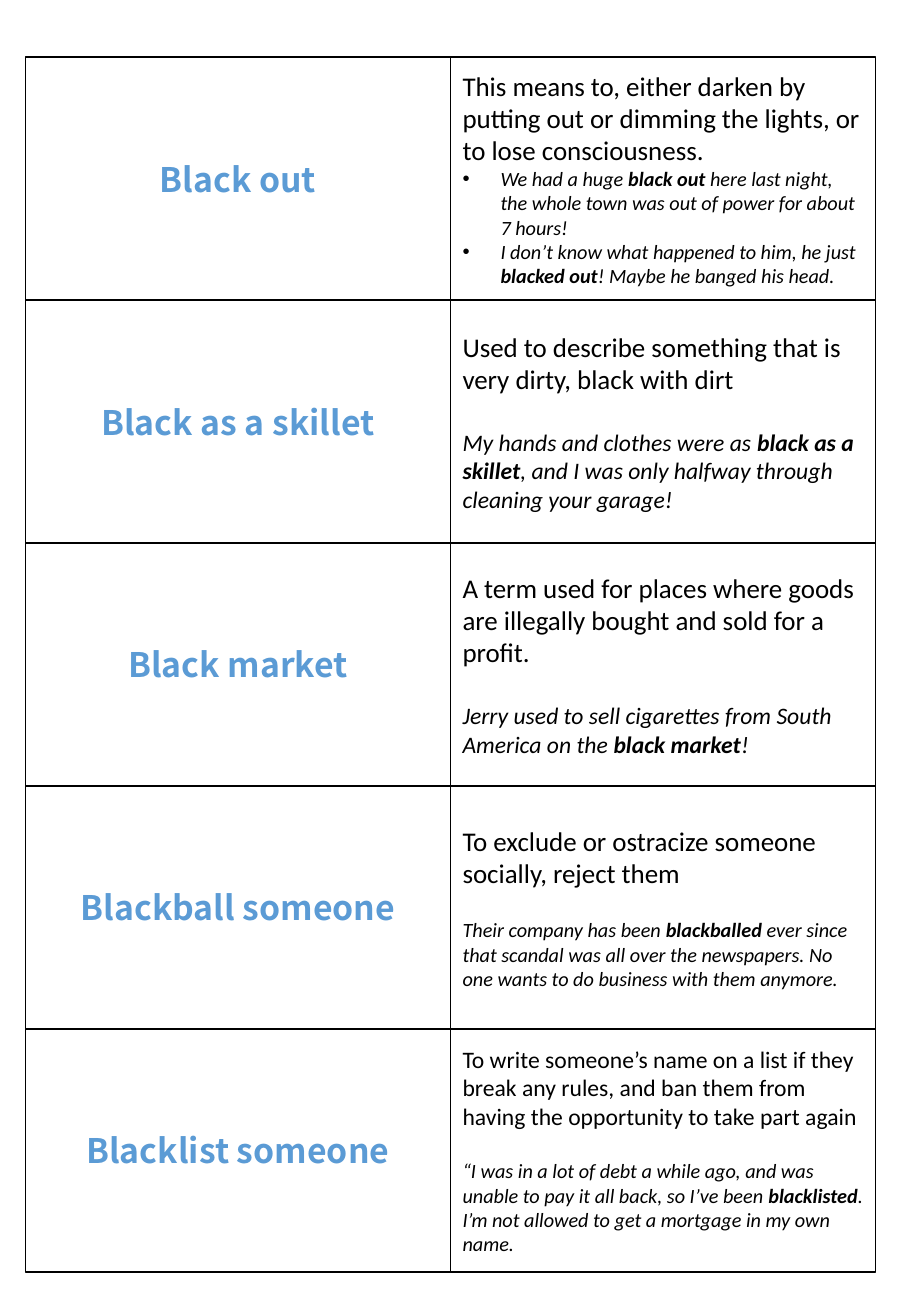
from lxml.etree import SubElement
from pptx import Presentation
from pptx.dml.color import RGBColor
from pptx.enum.shapes import MSO_SHAPE
from pptx.enum.text import MSO_ANCHOR, PP_ALIGN
from pptx.oxml.ns import qn
from pptx.util import Pt

LEFT, TOP, WIDTH, HEIGHT = 15.12, 33.84, 252, 144

# Each card: term, meaning, meaning size, example size, gap, bullets, examples
# Each example: words before the term, the term in bold, words after it
CARDS = [
    ("Black out",
     "This means to, either darken by putting out or dimming the lights, or to lose consciousness.",
     16, 12, 0, True,
     [("We had a huge ", "black out",
       " here last night, the whole town was out of power for about 7 hours!"),
      ("I don’t know what happened to him, he just ", "blacked out",
       "! Maybe he banged his head.")]),
    ("Black as a skillet",
     "Used to describe something that is very dirty, black with dirt",
     16, 14, 19.5, False,
     [("My hands and clothes were as ", "black as a skillet",
       ", and I was only halfway through cleaning your garage!")]),
    ("Black market",
     "A term used for places where goods are illegally bought and sold for a profit.",
     16, 14, 19.5, False,
     [("Jerry used to sell cigarettes from South America on the ", "black market", "!")]),
    ("Blackball someone",
     "To exclude or ostracize someone socially, reject them",
     16, 12, 17, False,
     [("Their company has been ", "blackballed",
       " ever since that scandal was all over the newspapers. "
       "No one wants to do business with them anymore.")]),
    ("Blacklist someone",
     "To write someone’s name on a list if they break any rules, "
     "and ban them from having the opportunity to take part again",
     14, 12, 17, False,
     [("“I was in a lot of debt a while ago, and was unable to pay it all back, so I’ve been ",
       "blacklisted", ". I’m not allowed to get a mortgage in my own name.")]),
]


def add_span(para, text, size, font="Calibri", color="000000", bold=False, italic=False):
    span = para.add_run()
    span.text = text
    span.font.size = Pt(size)
    span.font.name = font
    span.font.bold = bold
    span.font.italic = italic
    span.font.color.rgb = RGBColor.from_string(color)


def add_cell(page, column, row, align):
    box = page.shapes.add_shape(MSO_SHAPE.RECTANGLE, Pt(LEFT + column * WIDTH),
                                Pt(TOP + row * HEIGHT), Pt(WIDTH), Pt(HEIGHT))
    box.shadow.inherit = False
    box.fill.solid()
    box.fill.fore_color.rgb = RGBColor.from_string("FFFFFF")
    box.line.color.rgb = RGBColor.from_string("000000")
    box.line.width = Pt(1)
    box.text_frame.word_wrap = True
    box.text_frame.vertical_anchor = MSO_ANCHOR.MIDDLE
    box.text_frame.paragraphs[0].alignment = align
    return box.text_frame


deck = Presentation()
deck.slide_width, deck.slide_height = Pt(540), Pt(780)
page = deck.slides.add_slide(deck.slide_layouts[6])

for row, (term, meaning, meaning_size, example_size, gap, bullets, examples) in enumerate(CARDS):
    # Term on the left
    term_frame = add_cell(page, 0, row, PP_ALIGN.CENTER)
    add_span(term_frame.paragraphs[0], term, 20, font="Noto Sans CJK KR",
             color="5B9BD5", bold=True)

    # Meaning on the right
    meaning_frame = add_cell(page, 1, row, PP_ALIGN.LEFT)
    add_span(meaning_frame.paragraphs[0], meaning, meaning_size)

    # Examples below the meaning
    for before, key, after in examples:
        para = meaning_frame.add_paragraph()
        para.alignment = PP_ALIGN.LEFT
        para.space_before = Pt(gap)
        if bullets:
            properties = para._p.get_or_add_pPr()
            properties.set("marL", str(Pt(22.5)))
            properties.set("indent", str(-Pt(22.5)))
            SubElement(properties, qn("a:buFont"), typeface="Arial")
            SubElement(properties, qn("a:buChar"), char="•")
        add_span(para, before, example_size, italic=True)
        add_span(para, key, example_size, bold=True, italic=True)
        add_span(para, after, example_size, italic=True)

deck.save("out.pptx")
